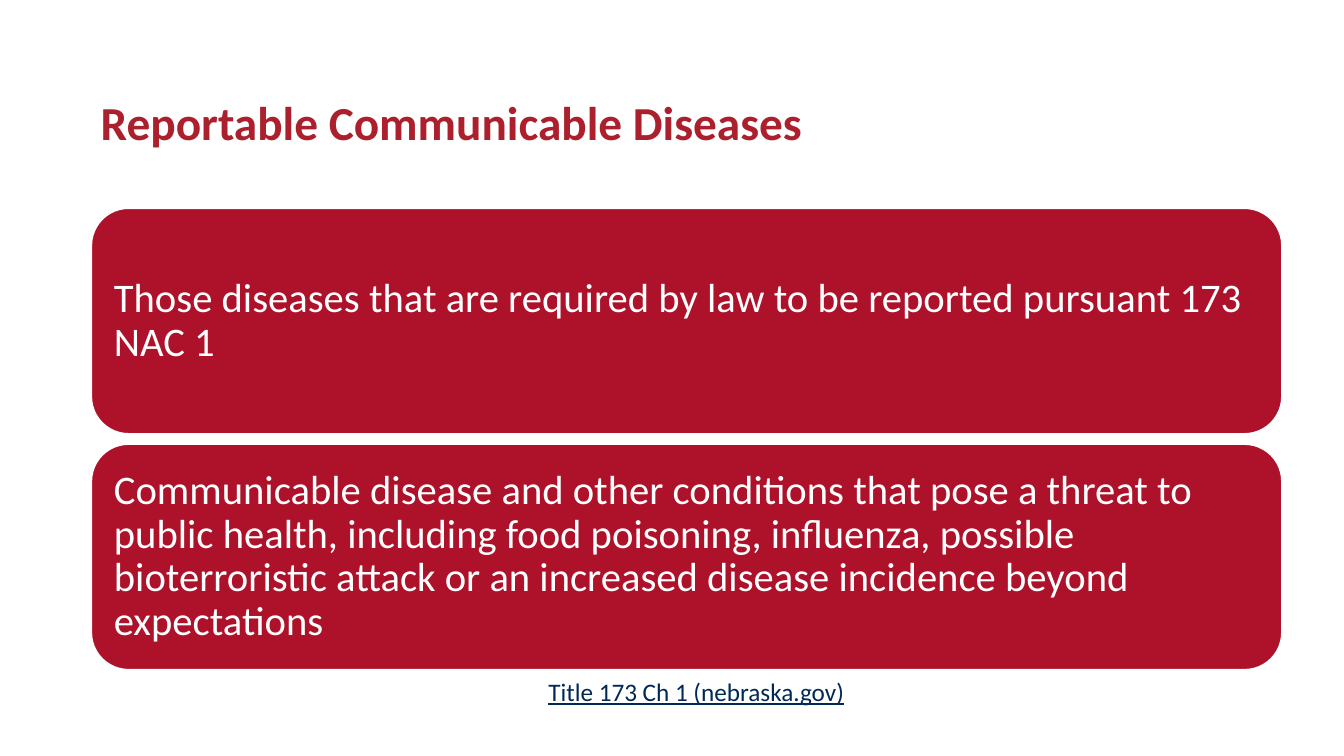
from pptx import Presentation
from pptx.dml.color import RGBColor
from pptx.enum.shapes import MSO_SHAPE
from pptx.enum.text import MSO_ANCHOR, PP_ALIGN
from pptx.util import Inches, Pt

WHITE = RGBColor(0xFF, 0xFF, 0xFF)
CARD_RED = RGBColor(0xAD, 0x12, 0x2A)
TITLE_RED = RGBColor(0xAC, 0x1F, 0x2D)
LINK_BLUE = RGBColor(0x00, 0x29, 0x57)

LEFT, WIDTH = 0.9, 11.82
CARD_TOP, CARD_HEIGHT, CARD_PITCH = 2.06, 2.25, 2.34

CARDS = [
    "Those diseases that are required by law to be reported pursuant 173 NAC 1",
    "Communicable disease and other conditions that pose a threat to public health, "
    "including food poisoning, influenza, possible bioterroristic attack or an "
    "increased disease incidence beyond expectations",
]


def write_text(box, text, color, frame_format, para_format, font_format):
    frame = box.text_frame
    para = frame.paragraphs[0]
    span = para.add_run()
    span.text = text
    span.font.color.rgb = color
    formats = (
        (frame, frame_format),
        (para, para_format),
        (span.font, {"name": "Calibri", **font_format}),
    )
    for target, values in formats:
        for name, value in values.items():
            setattr(target, name, value)


def add_title(page, text):
    box = page.shapes.add_textbox(Inches(LEFT), Inches(0.43), Inches(WIDTH), Inches(1.07))
    write_text(
        box, text, TITLE_RED,
        {"word_wrap": True, "vertical_anchor": MSO_ANCHOR.BOTTOM,
         "margin_top": 0, "margin_bottom": 0},
        {"line_spacing": 0.9},
        {"size": Pt(33.8), "bold": True},
    )


def add_card(page, row, text):
    top = CARD_TOP + row * CARD_PITCH
    card = page.shapes.add_shape(
        MSO_SHAPE.ROUNDED_RECTANGLE,
        Inches(LEFT), Inches(top), Inches(WIDTH), Inches(CARD_HEIGHT),
    )
    card.shadow.inherit = False
    card.fill.solid()
    card.fill.fore_color.rgb = CARD_RED
    card.line.color.rgb = WHITE
    card.line.width = Pt(2)
    margins = {f"margin_{side}": Inches(0.12) for side in ("left", "top", "right", "bottom")}
    write_text(
        card, text, WHITE,
        {"word_wrap": True, "vertical_anchor": MSO_ANCHOR.MIDDLE, **margins},
        {"line_spacing": 0.9, "alignment": PP_ALIGN.LEFT},
        {"size": Pt(29)},
    )


def add_reference(page, text):
    box = page.shapes.add_textbox(Inches(5.34), Inches(6.66), Inches(3.17), Inches(0.4))
    write_text(box, text, LINK_BLUE, {"word_wrap": False}, {},
               {"size": Pt(18), "underline": True})


def main():
    deck = Presentation()
    deck.slide_width, deck.slide_height = Inches(13.33), Inches(7.5)
    page = deck.slides.add_slide(deck.slide_layouts[6])
    add_title(page, "Reportable Communicable Diseases")
    for row, text in enumerate(CARDS):
        add_card(page, row, text)
    add_reference(page, "Title 173 Ch 1 (nebraska.gov)")
    deck.save("out.pptx")


if __name__ == "__main__":
    main()
